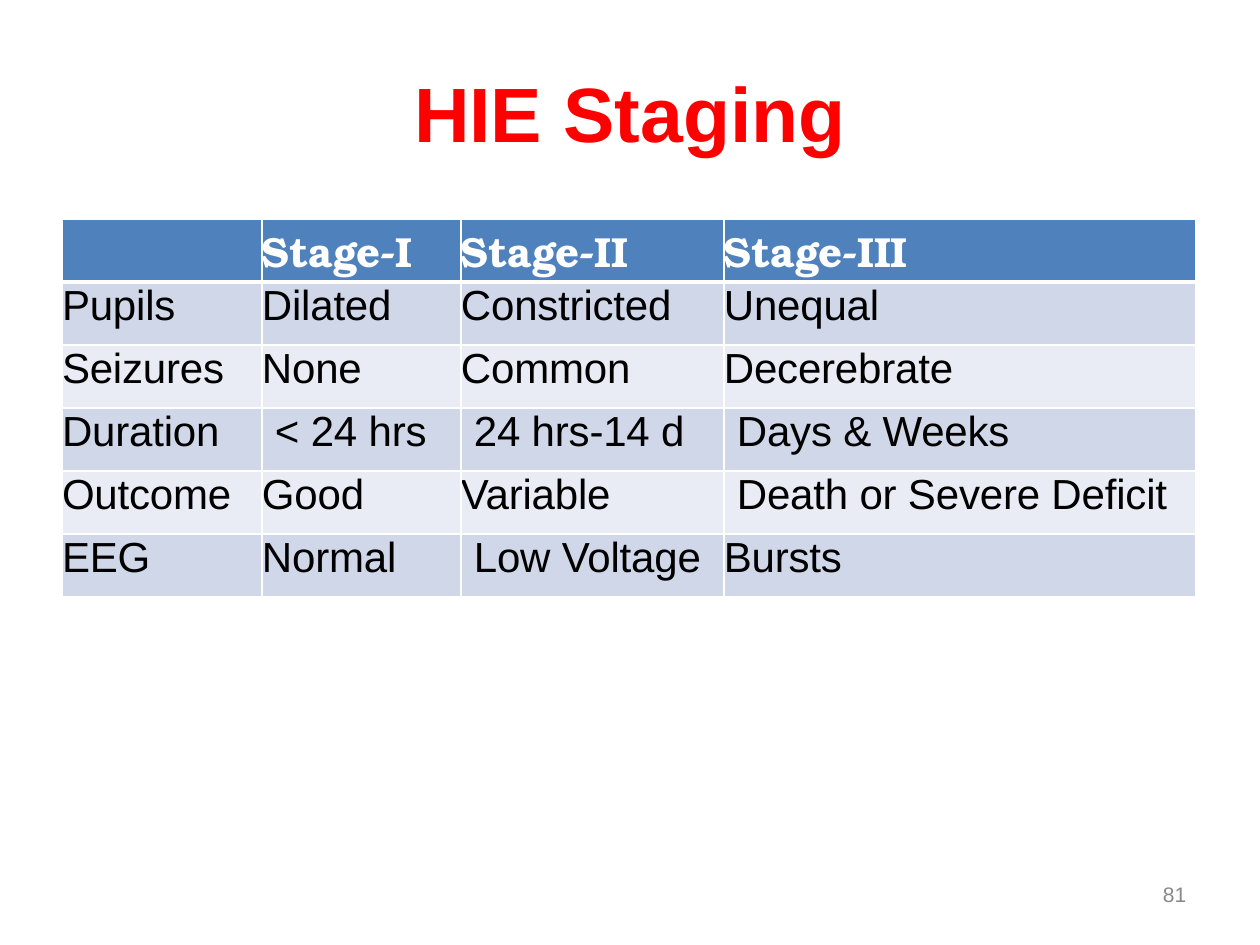
from dataclasses import dataclass

from lxml import etree
from pptx import Presentation
from pptx.dml.color import RGBColor
from pptx.enum.text import MSO_ANCHOR, MSO_AUTO_SIZE, PP_ALIGN
from pptx.oxml.ns import qn
from pptx.util import Inches, Pt

LEFT = PP_ALIGN.LEFT
TOP = MSO_ANCHOR.TOP
NO_AUTOFIT = MSO_AUTO_SIZE.NONE
PX_PER_INCH = 126
TITLE_ONLY = 5


@dataclass(frozen=True)
class Theme:
    body_font: str = "Arial"
    header_font: str = "TeX Gyre Bonum"
    title_color: str = "FF0000"
    header_fill: str = "4F81BC"
    band_fills: tuple = ("D0D7E8", "E9ECF4")
    white: str = "FFFFFF"
    text_color: str = "000000"
    muted: str = "888888"
    title_size: int = 44
    table_size: int = 24
    number_size: int = 12
    tracking: int = -10
    thin_border: int = 1
    thick_border: int = 3


STAGING = [
    ["", "Stage-I", "Stage-II", "Stage-III"],
    ["Pupils", "Dilated", "Constricted", "Unequal"],
    ["Seizures", "None", "Common", "Decerebrate"],
    ["Duration", "< 24 hrs", "24 hrs-14 d", "Days & Weeks"],
    ["Outcome", "Good", "Variable", "Death or Severe Deficit"],
    ["EEG", "Normal", "Low Voltage", "Bursts"],
]
INDENTED = {(3, 1), (3, 2), (3, 3), (4, 3), (5, 2)}


def px(length):
    return round(length * Inches(1) / PX_PER_INCH)


class SlideBuilder:
    def __init__(self, presentation, theme):
        self.theme = theme
        self.slide = presentation.slides.add_slide(presentation.slide_layouts[TITLE_ONLY])

    def style(self, paragraph, size, color, font_name, bold=False):
        paragraph.alignment = LEFT
        font = paragraph.font
        font.size = Pt(size)
        font.name = font_name
        font.bold = bold
        font.color.rgb = RGBColor.from_string(color)

    def clear_margins(self, holder):
        holder.margin_left = holder.margin_top = 0
        holder.margin_right = holder.margin_bottom = 0
        holder.vertical_anchor = TOP

    def indent(self, paragraph, length):
        paragraph._p.get_or_add_pPr().set("marL", str(px(length)))

    def title(self, text, left, top, width, height):
        shape = self.slide.shapes.title
        shape.left, shape.top = px(left), px(top)
        shape.width, shape.height = px(width), px(height)
        frame = shape.text_frame
        self.clear_margins(frame)
        frame.auto_size = NO_AUTOFIT
        frame.text = text
        paragraph = frame.paragraphs[0]
        paragraph.space_before = Pt(1)
        self.indent(paragraph, 1)
        self.style(paragraph, self.theme.title_size, self.theme.title_color,
                   self.theme.body_font, bold=True)

    def page_number(self, text, left, top, width, height):
        shape = self.slide.shapes.add_textbox(px(left), px(top), px(width), px(height))
        frame = shape.text_frame
        self.clear_margins(frame)
        frame.word_wrap = True
        frame.auto_size = NO_AUTOFIT
        frame.text = text
        paragraph = frame.paragraphs[0]
        paragraph.line_spacing = Pt(12)
        self.indent(paragraph, 4)
        self.style(paragraph, self.theme.number_size, self.theme.muted, self.theme.body_font)

    def borders(self, cell, top, bottom):
        properties = cell._tc.get_or_add_tcPr()
        thin = self.theme.thin_border
        widths = {"a:lnL": thin, "a:lnR": thin, "a:lnT": top, "a:lnB": bottom}
        for position, (tag, width) in enumerate(widths.items()):
            line = etree.Element(qn(tag), w=str(Pt(width)))
            fill = etree.SubElement(line, qn("a:solidFill"))
            etree.SubElement(fill, qn("a:srgbClr"), val=self.theme.white)
            properties.insert(position, line)

    def table_cell(self, cell, text, row, indented):
        theme = self.theme
        is_header = row == 0
        self.clear_margins(cell)
        cell.fill.solid()
        fill = theme.header_fill if is_header else theme.band_fills[(row - 1) % 2]
        cell.fill.fore_color.rgb = RGBColor.from_string(fill)
        self.borders(cell,
                     theme.thick_border if row == 1 else theme.thin_border,
                     theme.thick_border if is_header else theme.thin_border)
        if not text:
            return
        cell.text = text
        paragraph = cell.text_frame.paragraphs[0]
        paragraph.space_before = Pt(2 if is_header else 3)
        if indented:
            self.indent(paragraph, 13)
        self.style(paragraph, theme.table_size,
                   theme.white if is_header else theme.text_color,
                   theme.header_font if is_header else theme.body_font, bold=is_header)
        paragraph.runs[0]._r.get_or_add_rPr().set("spc", str(theme.tracking))

    def table(self, rows, left, top, column_widths, row_height, indented):
        frame = self.slide.shapes.add_table(
            len(rows), len(column_widths), px(left), px(top),
            px(sum(column_widths)), px(row_height * len(rows)))
        table = frame.table
        table.horz_banding = False
        for column, width in zip(table.columns, column_widths):
            column.width = px(width)
        for row, texts in enumerate(rows):
            table.rows[row].height = px(row_height)
            for column, text in enumerate(texts):
                self.table_cell(table.cell(row, column), text, row, (row, column) in indented)


def main():
    presentation = Presentation()
    presentation.slide_width = Inches(10)
    presentation.slide_height = Inches(7.5)
    builder = SlideBuilder(presentation, Theme())
    builder.title("HIE Staging", 413, 66, 436, 96)
    builder.page_number("81", 1159, 886, 36, 23)
    builder.table(STAGING, 62, 219, [200, 199, 263, 472], 63, INDENTED)
    presentation.save("out.pptx")


if __name__ == "__main__":
    main()
